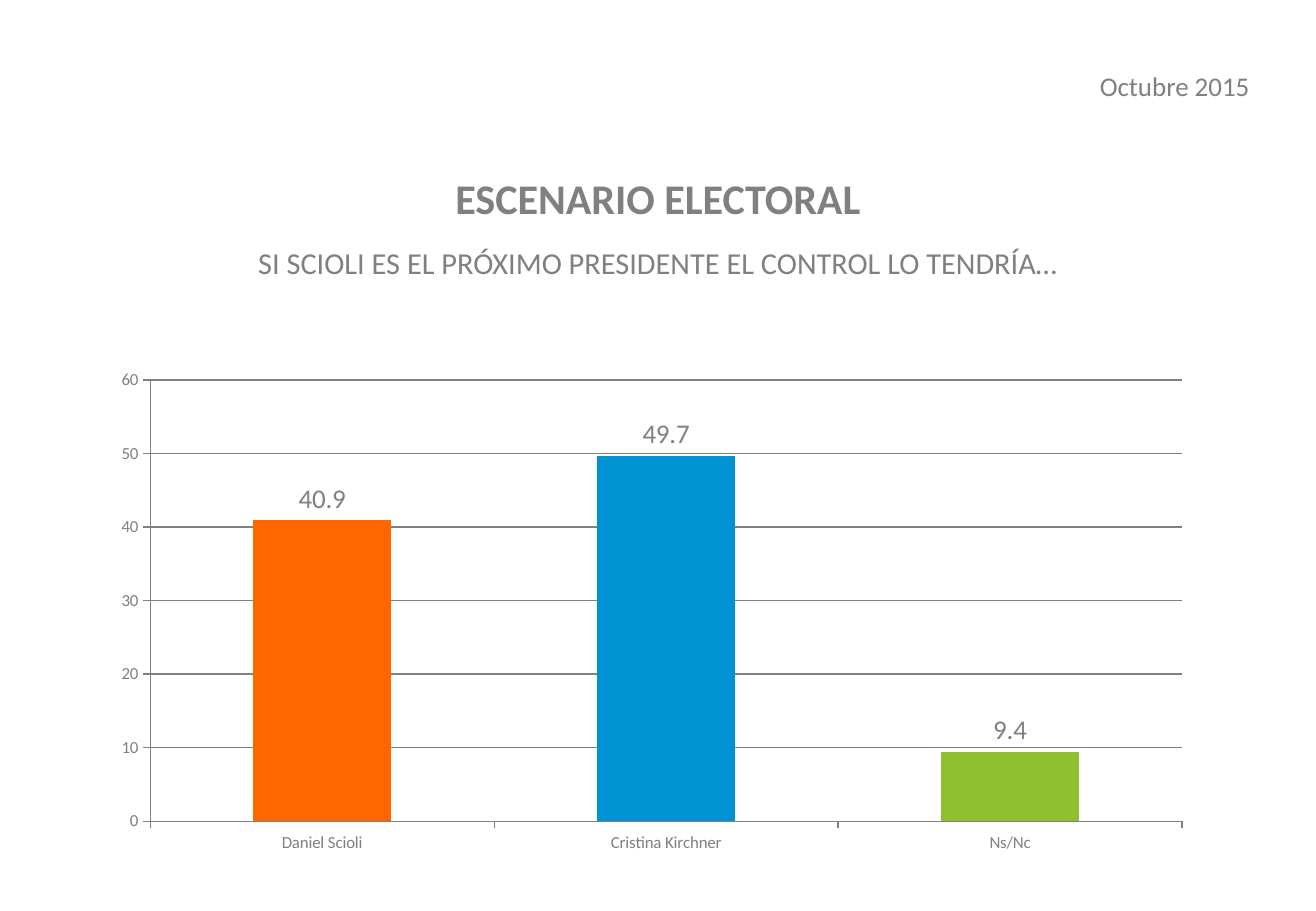
from pptx import Presentation
from pptx.chart.data import CategoryChartData
from pptx.dml.color import RGBColor
from pptx.enum.chart import XL_CHART_TYPE, XL_LABEL_POSITION, XL_TICK_MARK
from pptx.enum.text import PP_ALIGN
from pptx.util import Cm, Pt

COLUMNS = XL_CHART_TYPE.COLUMN_CLUSTERED
OUTSIDE_END = XL_LABEL_POSITION.OUTSIDE_END
TICK_OUT, TICK_NONE = XL_TICK_MARK.OUTSIDE, XL_TICK_MARK.NONE
CENTER, RIGHT = PP_ALIGN.CENTER, PP_ALIGN.RIGHT

FONT, GREY = "Calibri", "808080"
SLIDE_W, SLIDE_H = 27.51, 19.05
HEADING = [
    ("ESCENARIO ELECTORAL", 25, True),
    ("SI SCIOLI ES EL PRÓXIMO PRESIDENTE EL CONTROL LO TENDRÍA…", 18, False),
]
DATE = [("Octubre 2015", 16, False)]
RESULTS = [
    ("Daniel Scioli", 40.9, "FF6600"),
    ("Cristina Kirchner", 49.7, "0092D2"),
    ("Ns/Nc", 9.4, "8EC02F"),
]


def rgb(value):
    return RGBColor.from_string(value)


def style(font, size, bold=False):
    font.name, font.size, font.bold = FONT, Pt(size), bold
    font.color.rgb = rgb(GREY)


def add_text(s, box, lines, align, top=0.13, spacing=1.0, gap=0):
    tf = s.shapes.add_textbox(*map(Cm, box)).text_frame
    tf.word_wrap = True
    tf.margin_top = Cm(top)
    for i, (text, size, bold) in enumerate(lines):
        p = tf.add_paragraph() if i else tf.paragraphs[0]
        p.alignment, p.line_spacing = align, spacing
        if i:
            p.space_before = Pt(gap)
        r = p.add_run()
        r.text = text
        style(r.font, size, bold)


def add_results(s, box):
    data = CategoryChartData()
    data.categories = [name for name, _, _ in RESULTS]
    data.add_series("Series 1", [value for _, value, _ in RESULTS])
    chart = s.shapes.add_chart(COLUMNS, *map(Cm, box), data).chart
    chart.has_legend = chart.has_title = False
    style(chart.font, 10)

    values = chart.value_axis
    values.minimum_scale, values.maximum_scale, values.major_unit = 0, 60, 10
    values.has_major_gridlines = True
    for axis in (chart.category_axis, values):
        axis.major_tick_mark, axis.minor_tick_mark = TICK_OUT, TICK_NONE
    for line in (chart.category_axis.format.line, values.format.line,
                 values.major_gridlines.format.line):
        line.color.rgb = rgb(GREY)
        line.width = Pt(0.75)

    plot = chart.plots[0]
    plot.gap_width = 150
    plot.vary_by_categories = False
    series = plot.series[0]
    series.invert_if_negative = False
    for i, (_, _, color) in enumerate(RESULTS):
        fill = series.points[i].format.fill
        fill.solid()
        fill.fore_color.rgb = rgb(color)
    labels = series.data_labels
    labels.show_value = True
    labels.position = OUTSIDE_END
    style(labels.font, 16)


def main():
    """Build the election scenario slide."""
    prs = Presentation()
    prs.slide_width, prs.slide_height = Cm(SLIDE_W), Cm(SLIDE_H)
    s = prs.slides.add_slide(prs.slide_layouts[6])
    add_results(s, (2.08, 7.54, 23.09, 10.49))
    add_text(s, (0, 3.78, SLIDE_W, 4.17), HEADING, CENTER, 0.03, 0.8, 17)
    add_text(s, (21.77, 1.32, 4.6, 0.94), DATE, RIGHT)
    prs.save("out.pptx")


if __name__ == "__main__":
    main()
